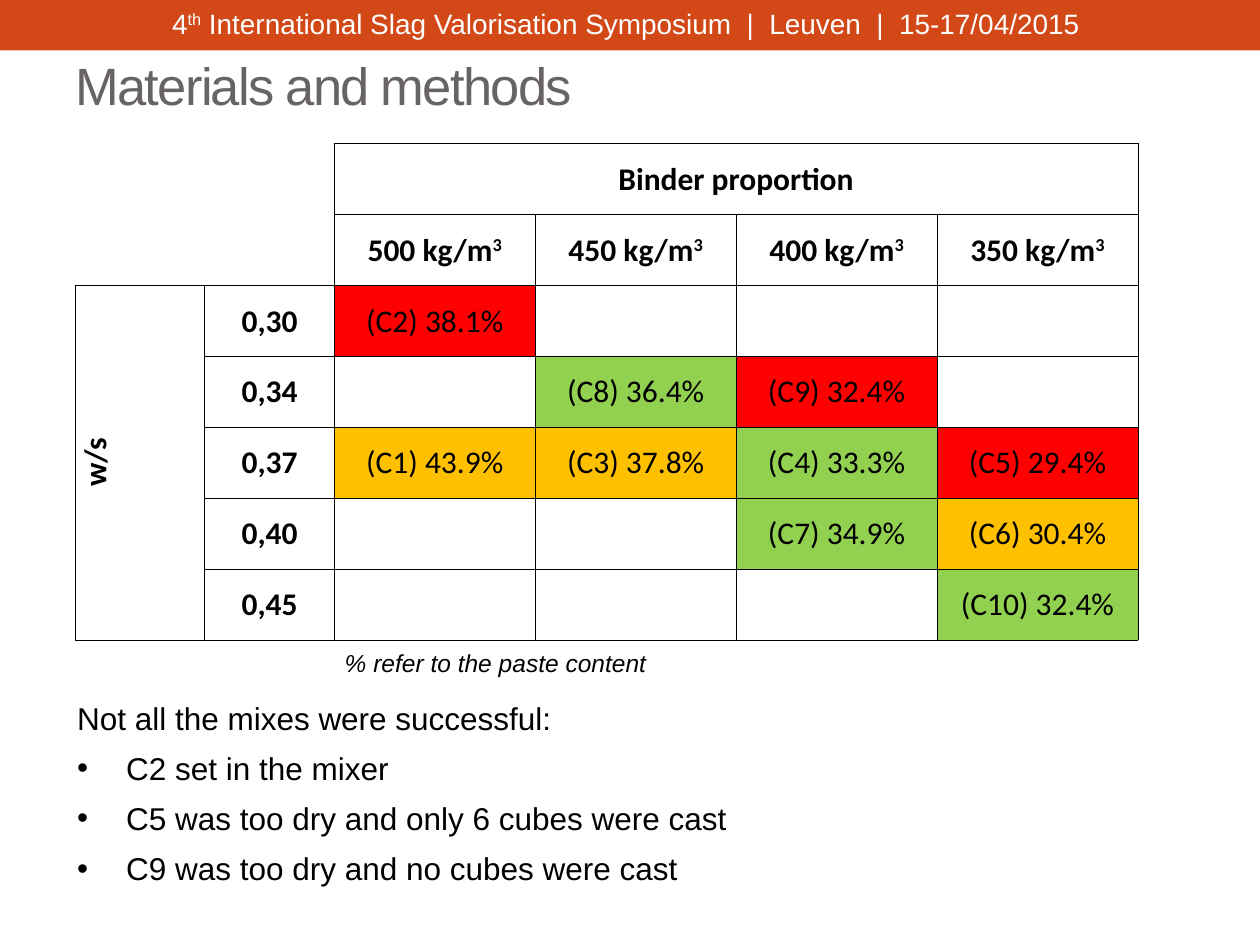
from dataclasses import dataclass
from typing import Any, NamedTuple

from lxml.etree import SubElement
from pptx import Presentation
from pptx.dml.color import RGBColor
from pptx.enum.shapes import MSO_SHAPE
from pptx.enum.text import MSO_ANCHOR, MSO_AUTO_SIZE, PP_ALIGN
from pptx.oxml.ns import qn
from pptx.util import Cm, Pt


@dataclass(frozen=True)
class Theme:
    band: str = "D34817"
    heading: str = "696464"
    ink: str = "000000"
    paper: str = "FFFFFF"
    failed: str = "FF0000"
    fair: str = "FFC000"
    good: str = "92D050"
    text_font: str = "Arial"
    table_font: str = "Calibri"
    heading_size: int = 30
    body_size: int = 18
    band_size: int = 16
    caption_size: int = 14


class Box(NamedTuple):
    left: float
    top: float
    width: float
    height: float


class Mix(NamedTuple):
    ratio: str
    binder: int
    label: str
    color: str


THEME = Theme()
SLIDE_WIDTH, SLIDE_HEIGHT = 25.4, 19.05
HANGING = Cm(0.99)

BINDERS = (500, 450, 400, 350)
RATIOS = ("0,30", "0,34", "0,37", "0,40", "0,45")
HEADER_ROWS = LABEL_COLUMNS = 2
LABEL_WIDTH, BINDER_WIDTH, ROW_HEIGHT = 2.61, 4.05, 1.43
MIXES = (
    Mix("0,30", 500, "(C2) 38.1%", THEME.failed),
    Mix("0,34", 450, "(C8) 36.4%", THEME.good),
    Mix("0,34", 400, "(C9) 32.4%", THEME.failed),
    Mix("0,37", 500, "(C1) 43.9%", THEME.fair),
    Mix("0,37", 450, "(C3) 37.8%", THEME.fair),
    Mix("0,37", 400, "(C4) 33.3%", THEME.good),
    Mix("0,37", 350, "(C5) 29.4%", THEME.failed),
    Mix("0,40", 400, "(C7) 34.9%", THEME.good),
    Mix("0,40", 350, "(C6) 30.4%", THEME.fair),
    Mix("0,45", 350, "(C10) 32.4%", THEME.good),
)
FINDINGS = (
    "C2 set in the mixer",
    "C5 was too dry and only 6 cubes were cast",
    "C9 was too dry and no cubes were cast",
)


def apply_format(target: Any, values: dict[str, Any]) -> None:
    for name, value in values.items():
        setattr(target, name, value)


def place(shape: Any, box: Box) -> None:
    apply_format(shape, {name: Cm(value) for name, value in box._asdict().items()})


def add_run(paragraph: Any, text: str, size: int, color: str = THEME.ink,
            font: str = THEME.text_font, raised: bool = False, **style: Any) -> Any:
    run = paragraph.add_run()
    run.text = text
    apply_format(run.font, {"size": Pt(size), "name": font, **style})
    run.font.color.rgb = RGBColor.from_string(color)
    if raised:
        run.font._element.set("baseline", "30000")
    return run


def add_text_box(slide: Any, box: Box) -> Any:
    frame = slide.shapes.add_textbox(*map(Cm, box)).text_frame
    frame.word_wrap = True
    return frame.paragraphs[0]


def add_band(slide: Any) -> None:
    band = slide.shapes.add_shape(
        MSO_SHAPE.RECTANGLE, 0, 0, Cm(SLIDE_WIDTH), Cm(1.02))
    band.shadow.inherit = False
    band.fill.solid()
    band.fill.fore_color.rgb = RGBColor.from_string(THEME.band)
    band.line.fill.background()
    event = add_text_box(slide, Box(0, 0, SLIDE_WIDTH, 0.94))
    event.alignment = PP_ALIGN.CENTER
    for text, raised in (
        ("4", False),
        ("th", True),
        (" International Slag Valorisation Symposium  |  Leuven  |  15-17/04/2015 ", False),
    ):
        add_run(event, text, THEME.band_size, THEME.paper, raised=raised)


def fill_title(title: Any) -> None:
    place(title, Box(1.27, 0.33, 22.86, 2.74))
    apply_format(title.text_frame, {"vertical_anchor": MSO_ANCHOR.MIDDLE,
                                    "auto_size": MSO_AUTO_SIZE.NONE})
    heading = title.text_frame.paragraphs[0]
    heading.alignment = PP_ALIGN.LEFT
    run = add_run(heading, "Materials and methods", THEME.heading_size, THEME.heading)
    run.font._element.set("spc", "-100")


def fill_findings(body: Any) -> None:
    place(body, Box(1.3, 13.92, 22.4, 4.95))
    frame = body.text_frame
    apply_format(frame, {"auto_size": MSO_AUTO_SIZE.NONE,
                         "vertical_anchor": MSO_ANCHOR.TOP})
    for index, text in enumerate(("Not all the mixes were successful:", *FINDINGS)):
        finding = frame.add_paragraph() if index else frame.paragraphs[0]
        apply_format(finding, {"space_before": Pt(0), "space_after": Pt(6),
                               "line_spacing": 1.05, "alignment": PP_ALIGN.LEFT})
        add_run(finding, text, THEME.body_size)
        properties = finding._p.get_or_add_pPr()
        properties.set("marL", str(HANGING))
        properties.set("indent", str(-HANGING))
        if index:
            SubElement(properties, qn("a:buChar"), char="•")
        else:
            SubElement(properties, qn("a:buNone"))


def is_corner(row: int, column: int) -> bool:
    return row < HEADER_ROWS and column < LABEL_COLUMNS


def format_cell(cell: Any, row: int, column: int) -> None:
    apply_format(cell, {"vertical_anchor": MSO_ANCHOR.MIDDLE, "margin_left": Cm(0.02),
                        "margin_right": Cm(0.02), "margin_top": Cm(0.02),
                        "margin_bottom": 0})
    # An edge shows unless the cell belongs to the open corner
    visible = dict.fromkeys("LRTB", True)
    if is_corner(row, column):
        visible = {"L": False, "R": column == LABEL_COLUMNS - 1,
                   "T": False, "B": row == HEADER_ROWS - 1}
    properties = cell._tc.get_or_add_tcPr()
    for side, shown in visible.items():
        edge = SubElement(properties, qn(f"a:ln{side}"), w=str(Pt(0.5)))
        paint = SubElement(edge, qn("a:solidFill" if shown else "a:noFill"))
        if shown:
            SubElement(paint, qn("a:srgbClr"), val=THEME.ink)
    cell.fill.background()


def write_cell(cell: Any, text: str, bold: bool = True, power: str = "") -> None:
    paragraph = cell.text_frame.paragraphs[0]
    paragraph.alignment = PP_ALIGN.CENTER
    style = {"size": THEME.body_size, "font": THEME.table_font, "bold": bold}
    add_run(paragraph, text, **style)
    if power:
        add_run(paragraph, power, raised=True, **style)


def add_mix_table(slide: Any) -> None:
    widths = [LABEL_WIDTH] * LABEL_COLUMNS + [BINDER_WIDTH] * len(BINDERS)
    row_count = HEADER_ROWS + len(RATIOS)
    box = Box(1.52, 2.89, sum(widths), row_count * ROW_HEIGHT)
    table = slide.shapes.add_table(row_count, len(widths), *map(Cm, box)).table
    apply_format(table, {"first_row": False, "horz_banding": False})
    for column, width in zip(table.columns, widths):
        column.width = Cm(width)
    for row in range(row_count):
        for column in range(len(widths)):
            format_cell(table.cell(row, column), row, column)

    # Headings along both axes
    binder_heading = table.cell(0, LABEL_COLUMNS)
    binder_heading.merge(table.cell(0, len(widths) - 1))
    write_cell(binder_heading, "Binder proportion")
    ratio_heading = table.cell(HEADER_ROWS, 0)
    ratio_heading.merge(table.cell(row_count - 1, 0))
    write_cell(ratio_heading, "w/s")
    ratio_heading._tc.get_or_add_tcPr().set("vert", "vert270")
    for column, binder in enumerate(BINDERS, LABEL_COLUMNS):
        write_cell(table.cell(1, column), f"{binder} kg/m", power="3")
    for row, ratio in enumerate(RATIOS, HEADER_ROWS):
        write_cell(table.cell(row, 1), ratio)

    # Tested mixes
    for mix in MIXES:
        cell = table.cell(HEADER_ROWS + RATIOS.index(mix.ratio),
                          LABEL_COLUMNS + BINDERS.index(mix.binder))
        write_cell(cell, mix.label, bold=False)
        cell.fill.solid()
        cell.fill.fore_color.rgb = RGBColor.from_string(mix.color)


def main() -> None:
    deck = Presentation()
    apply_format(deck, {"slide_width": Cm(SLIDE_WIDTH), "slide_height": Cm(SLIDE_HEIGHT)})
    slide = deck.slides.add_slide(deck.slide_layouts[1])
    fill_title(slide.shapes.title)
    fill_findings(slide.placeholders[1])
    add_band(slide)
    add_mix_table(slide)
    caption = add_text_box(slide, Box(6.7, 12.93, 8.6, 0.86))
    add_run(caption, "% refer to the paste content", THEME.caption_size, italic=True)
    deck.save("out.pptx")


if __name__ == "__main__":
    main()
